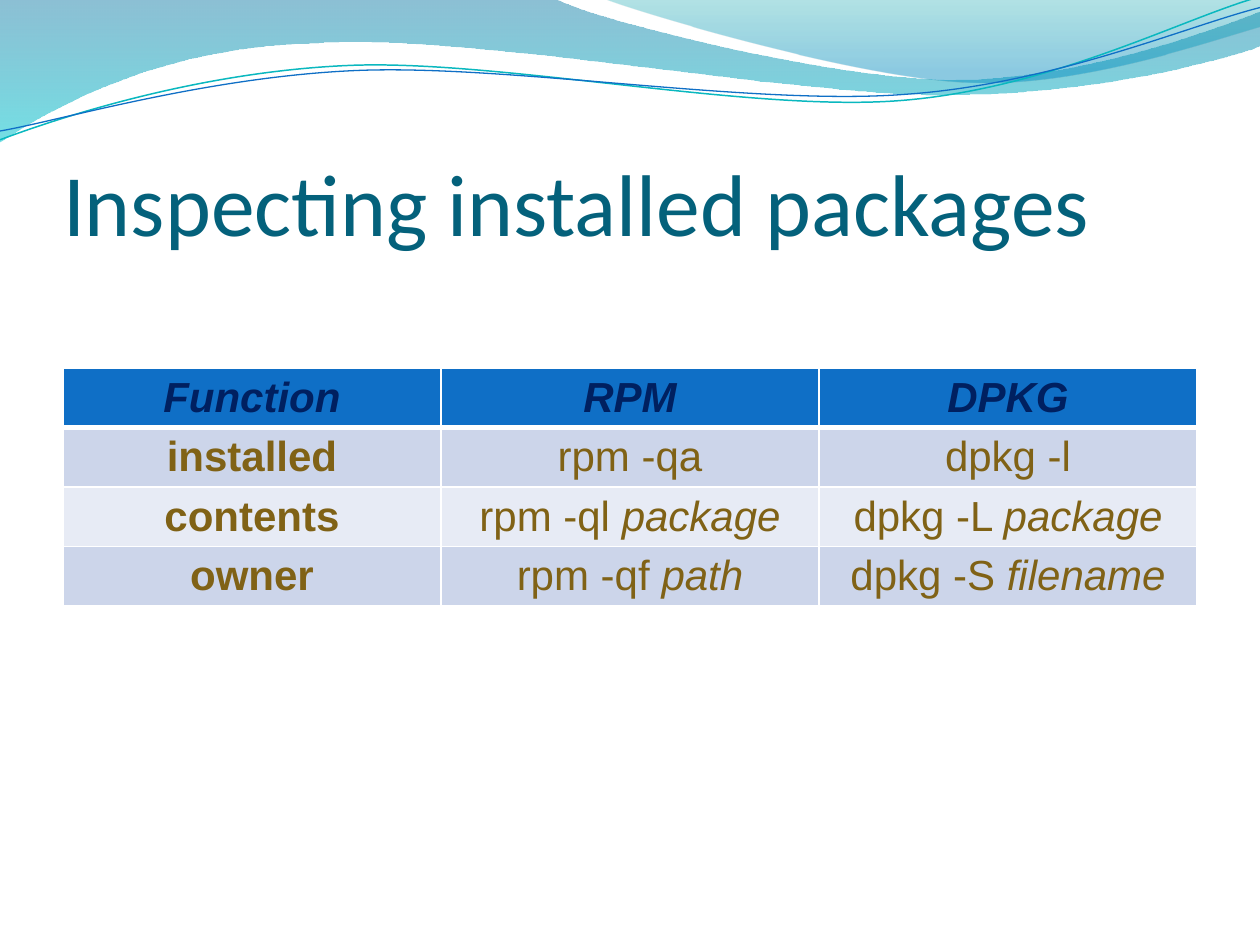
from dataclasses import dataclass

from lxml.etree import SubElement
from pptx import Presentation
from pptx.dml.color import RGBColor
from pptx.enum.text import MSO_ANCHOR as Anchor, MSO_AUTO_SIZE as AutoSize, PP_ALIGN as Align
from pptx.oxml.ns import qn
from pptx.util import Inches, Pt


@dataclass(frozen=True)
class Theme:
    title_font: str = "Calibri"
    table_font: str = "Arial"
    title_size: int = 50
    table_size: int = 24
    title: str = "04617B"
    header_text: str = "002060"
    body_text: str = "806216"
    header_fill: str = "0F6FC6"
    bands: tuple = ("CCD5EA", "E7EBF5")
    border: str = "FFFFFF"
    wave_stops: tuple = ((0, "0074A1", 45), (1, "00C6CF", 55))
    crest_stops: tuple = ((0, "00A1A9", 30), (0.8, "008BBF", 45))
    teal_line: str = "0AB8BF"
    blue_line: str = "0F6FC6"


WAVE = [
    (0, 0), (4.4, -0.01),
    (4.76, 0.17, 6.64, 0.63, 7.58, 0.63), (8.53, 0.63, 9.58, 0.26, 10, 0.09),
    (10.01, 0.36),
    (9.83, 0.44, 8.7, 0.76, 7.46, 0.75), (6.22, 0.75, 3.82, 0.28, 2.57, 0.34),
    (1.29, 0.36, 0.46, 0.83, -0.01, 1.13), (0, 0),
]
CREST = [
    (4.79, -0.01),
    (5.09, 0.11, 6.82, 0.62, 7.69, 0.65), (8.56, 0.69, 9.61, 0.32, 10, 0.21),
    (10, 0), (4.79, -0.01),
]
TEAL_CURVE = [
    (0, 1.11),
    (0.48, 0.93, 1.58, 0.57, 2.77, 0.52), (3.95, 0.47, 5.93, 0.89, 7.13, 0.8),
    (8.33, 0.71, 9.38, 0.15, 9.98, -0.02),
]
BLUE_CURVE = [
    (0, 1.04),
    (0.47, 0.96, 1.64, 0.61, 2.83, 0.56), (4.03, 0.51, 5.97, 0.84, 7.17, 0.75),
    (8.36, 0.67, 9.41, 0.21, 10, 0.06),
]
HEADINGS = ["Function", "RPM", "DPKG"]
COMMANDS = [
    ("installed", ("rpm -qa", ""), ("dpkg -l", "")),
    ("contents", ("rpm -ql ", "package"), ("dpkg -L ", "package")),
    ("owner", ("rpm -qf ", "path"), ("dpkg -S ", "filename")),
]


def add_text(paragraph, text, *, font, size, color, bold=False, italic=False, align=Align.LEFT):
    paragraph.alignment = align
    run = paragraph.add_run()
    run.text = text
    run.font.name, run.font.size = font, Pt(size)
    run.font.bold, run.font.italic = bold, italic
    run.font.color.rgb = RGBColor.from_string(color)


def bend(outline, segments):
    lines = iter(list(outline._element.iter(qn("a:lnTo"))))
    for segment in segments[1:]:
        line = next(lines)
        if len(segment) == 2:
            continue
        cubic = line.makeelement(qn("a:cubicBezTo"), {})
        line.addprevious(cubic)
        for part in (line, next(lines), next(lines)):
            cubic.append(part[0])
            part.getparent().remove(part)


class SlideBuilder:
    def __init__(self, slide, theme):
        self.slide, self.theme = slide, theme

    def outline(self, segments, close):
        start, *points = [(Inches(x), Inches(y)) for segment in segments
                          for x, y in zip(segment[::2], segment[1::2])]
        builder = self.slide.shapes.build_freeform(*start)
        builder.add_line_segments(points, close=close)
        outline = builder.convert_to_shape()
        bend(outline, segments)
        outline.shadow.inherit = False
        return outline

    def wave(self, segments, stops):
        wave = self.outline(segments, True)
        wave.line.fill.background()
        wave.fill.gradient()
        wave.fill.gradient_angle = 270
        for stop, (position, color, _) in zip(wave.fill.gradient_stops, stops):
            stop.position = position
            stop.color.rgb = RGBColor.from_string(color)
        gradient = wave._element.spPr.find(qn("a:gradFill"))
        for color, (_, _, opacity) in zip(gradient.iter(qn("a:srgbClr")), stops):
            SubElement(color, qn("a:alpha"), val=str(opacity * 1000))

    def curve(self, segments, color, width):
        curve = self.outline(segments, False)
        curve.fill.background()
        curve.line.color.rgb = RGBColor.from_string(color)
        curve.line.width = Pt(width)

    def title(self, text, left, top, width, height):
        title = self.slide.shapes.title
        self.slide.shapes._spTree.append(title._element)
        title.left, title.top = Inches(left), Inches(top)
        title.width, title.height = Inches(width), Inches(height)
        frame = title.text_frame
        frame.auto_size, frame.word_wrap = AutoSize.NONE, True
        frame.vertical_anchor = Anchor.BOTTOM
        frame.margin_left = frame.margin_right = frame.margin_bottom = 0
        frame.margin_top = Inches(0.05)
        add_text(frame.paragraphs[0], text, font=self.theme.title_font,
                 size=self.theme.title_size, color=self.theme.title)

    def borders(self, cell, top, bottom):
        properties = cell._tc.get_or_add_tcPr()
        for index, (side, width) in enumerate((("L", 1), ("R", 1), ("T", top), ("B", bottom))):
            line = properties.makeelement(qn(f"a:ln{side}"), {"w": str(Pt(width))})
            SubElement(SubElement(line, qn("a:solidFill")), qn("a:srgbClr"), val=self.theme.border)
            properties.insert(index, line)

    def cell(self, cell, runs, fill, top, bottom, **style):
        cell.fill.solid()
        cell.fill.fore_color.rgb = RGBColor.from_string(fill)
        self.borders(cell, top, bottom)
        for text, emphasis in runs:
            add_text(cell.text_frame.paragraphs[0], text, font=self.theme.table_font,
                     size=self.theme.table_size, align=Align.CENTER, **style, **emphasis)

    def table(self, headings, rows, left, top, width, height, row_height):
        theme = self.theme
        frame = self.slide.shapes.add_table(
            len(rows) + 1, len(headings), Inches(left), Inches(top), Inches(width), Inches(height))
        table = frame.table
        for row in table.rows:
            row.height = Inches(row_height)
        frame.height = Inches(height)
        for column, heading in enumerate(headings):
            self.cell(table.cell(0, column), [(heading, {"bold": True, "italic": True})],
                      theme.header_fill, 1, 3, color=theme.header_text)
        for index, (function, *commands) in enumerate(rows):
            contents = [[(function, {"bold": True})]]
            for command, argument in commands:
                runs = [(command, {}), (argument, {"italic": True})]
                contents.append([run for run in runs if run[0]])
            for column, runs in enumerate(contents):
                self.cell(table.cell(index + 1, column), runs, theme.bands[index % 2],
                          1 if index else 3, 1, color=theme.body_text)


def main():
    theme = Theme()
    deck = Presentation()
    deck.slide_width, deck.slide_height = Inches(10), Inches(7.5)
    builder = SlideBuilder(deck.slides.add_slide(deck.slide_layouts[5]), theme)
    builder.wave(WAVE, theme.wave_stops)
    builder.wave(CREST, theme.crest_stops)
    builder.curve(TEAL_CURVE, theme.teal_line, 0.85)
    builder.curve(BLUE_CURVE, theme.blue_line, 0.75)
    builder.title("Inspecting installed packages", 0.5, 0.77, 9, 1.25)
    builder.table(HEADINGS, COMMANDS, 0.5, 2.92, 9, 2, 0.41)
    deck.save("out.pptx")


if __name__ == "__main__":
    main()
